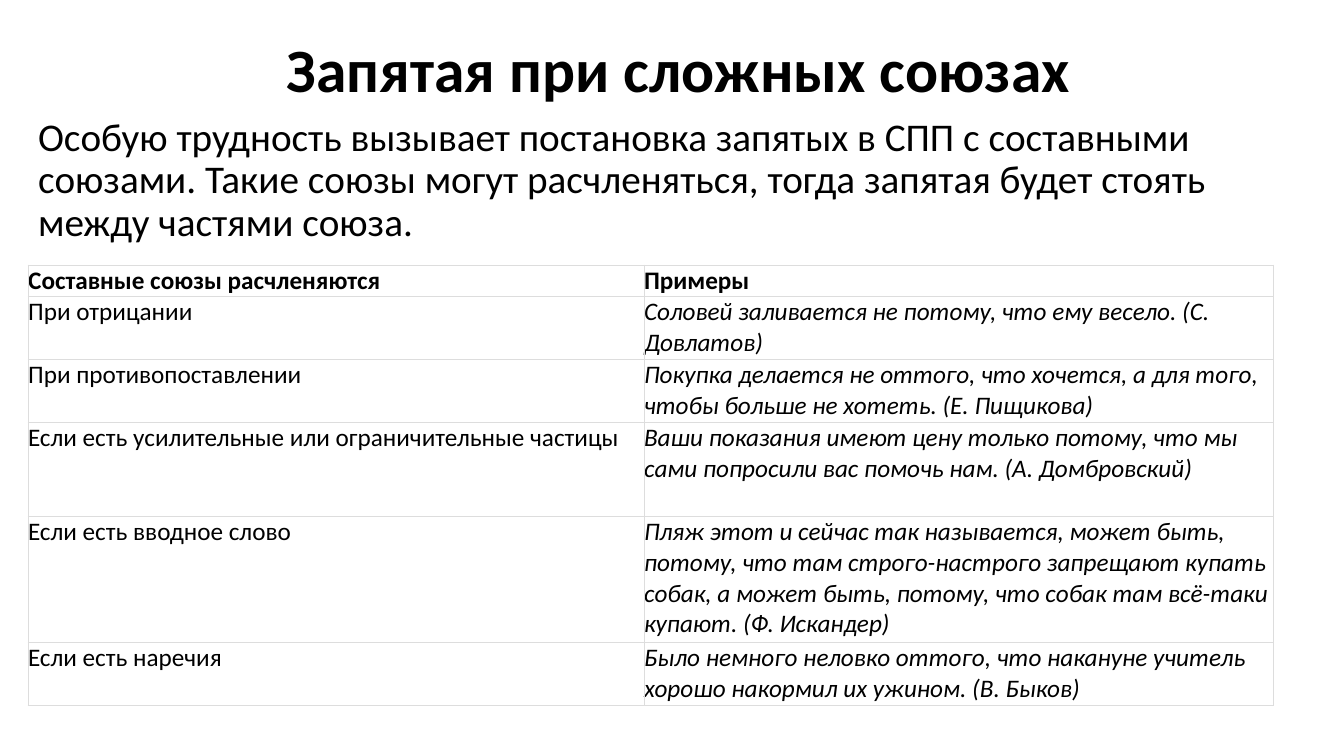
from lxml import etree
from pptx import Presentation
from pptx.dml.color import RGBColor
from pptx.enum.text import MSO_ANCHOR, PP_ALIGN
from pptx.oxml.ns import qn
from pptx.util import Cm, Pt

CENTER, LEFT = PP_ALIGN.CENTER, PP_ALIGN.LEFT
MIDDLE, TOP = MSO_ANCHOR.MIDDLE, MSO_ANCHOR.TOP

BLACK = RGBColor(0x00, 0x00, 0x00)
WHITE = RGBColor(0xFF, 0xFF, 0xFF)
GRID_GRAY = RGBColor(0xDD, 0xDD, 0xDD)
FONT = "Calibri"

TITLE = " Запятая при сложных союзах"
INTRO = (
    "Особую трудность вызывает постановка запятых в СПП с составными союзами. "
    "Такие союзы могут расчленяться, тогда запятая будет стоять между частями союза."
)
HEADER = ("Составные союзы расчленяются", "Примеры")
# Condition, example, height of the row in text lines
RULES = [
    ("При отрицании",
     "Соловей заливается не потому, что ему весело. (С. Довлатов)", 2),
    ("При противопоставлении",
     "Покупка делается не оттого, что хочется, а для того, "
     "чтобы больше не хотеть. (Е. Пищикова)", 2),
    ("Если есть усилительные или ограничительные частицы",
     "Ваши показания имеют цену только потому, что мы сами попросили вас "
     "помочь нам. (А. Домбровский)", 3),
    ("Если есть вводное слово",
     "Пляж этот и сейчас так называется, может быть, потому, что там "
     "строго-настрого запрещают купать собак, а может быть, потому, "
     "что собак там всё-таки купают. (Ф. Искандер)", 4),
    ("Если есть наречия",
     "Было немного неловко оттого, что накануне учитель хорошо накормил "
     "их ужином. (В. Быков)", 2),
]


def write(frame, text, size, bold=False, italic=False):
    """Fill the frame with one formatted paragraph and return it."""
    paragraph = frame.paragraphs[0]
    paragraph.text = text
    for run in paragraph.runs:
        font = run.font
        font.name, font.size = FONT, Pt(size)
        font.bold, font.italic = bold, italic
        font.color.rgb = BLACK
    return paragraph


def add_text(slide, box, text, size, bold=False, align=LEFT, anchor=TOP):
    frame = slide.shapes.add_textbox(*box).text_frame
    frame.word_wrap = True
    frame.vertical_anchor = anchor
    paragraph = write(frame, text, size, bold)
    paragraph.alignment = align
    paragraph.line_spacing = 0.9
    return paragraph


def add_title(slide, box):
    add_text(slide, box, TITLE, 44, bold=True, align=CENTER, anchor=MIDDLE)


def add_intro(slide, box):
    add_text(slide, box, INTRO, 28).space_before = Pt(10)


def outline_cell(cell):
    properties = cell._tc.get_or_add_tcPr()
    for side in ("a:lnL", "a:lnR", "a:lnT", "a:lnB"):
        line = etree.SubElement(properties, qn(side), w=str(Pt(0.75)))
        fill = etree.SubElement(line, qn("a:solidFill"))
        etree.SubElement(fill, qn("a:srgbClr"), val=str(GRID_GRAY))


def style_cell(cell, text, bold, italic):
    cell.margin_left = cell.margin_right = 0
    cell.margin_top = cell.margin_bottom = 0
    outline_cell(cell)
    cell.fill.solid()
    cell.fill.fore_color.rgb = WHITE
    write(cell.text_frame, text, 18, bold, italic)


def add_rules_table(slide, box):
    left, top, width, height = box
    rows = [(*HEADER, 1), *RULES]
    total_lines = sum(lines for _, _, lines in rows)
    table = slide.shapes.add_table(len(rows), 2, left, top, width, height).table
    table.horz_banding = False
    condition_width = Cm(15.52)
    table.columns[0].width = condition_width
    table.columns[1].width = width - condition_width
    for index, (condition, example, lines) in enumerate(rows):
        table.rows[index].height = height * lines // total_lines
        is_header = index == 0
        style_cell(table.cell(index, 0), condition, is_header, False)
        style_cell(table.cell(index, 1), example, is_header, not is_header)


def main():
    presentation = Presentation()
    presentation.slide_width = Cm(33.87)
    presentation.slide_height = Cm(19.05)
    slide = presentation.slides.add_slide(presentation.slide_layouts[6])
    margin = Cm(0.71)
    add_title(slide, (Cm(2.33), 0, Cm(29.21), Cm(3.68)))
    add_intro(slide, (margin, Cm(2.84), Cm(32.44), Cm(12.09)))
    add_rules_table(slide, (margin, Cm(6.68), Cm(31.37), Cm(11.1)))
    presentation.save("out.pptx")


if __name__ == "__main__":
    main()
